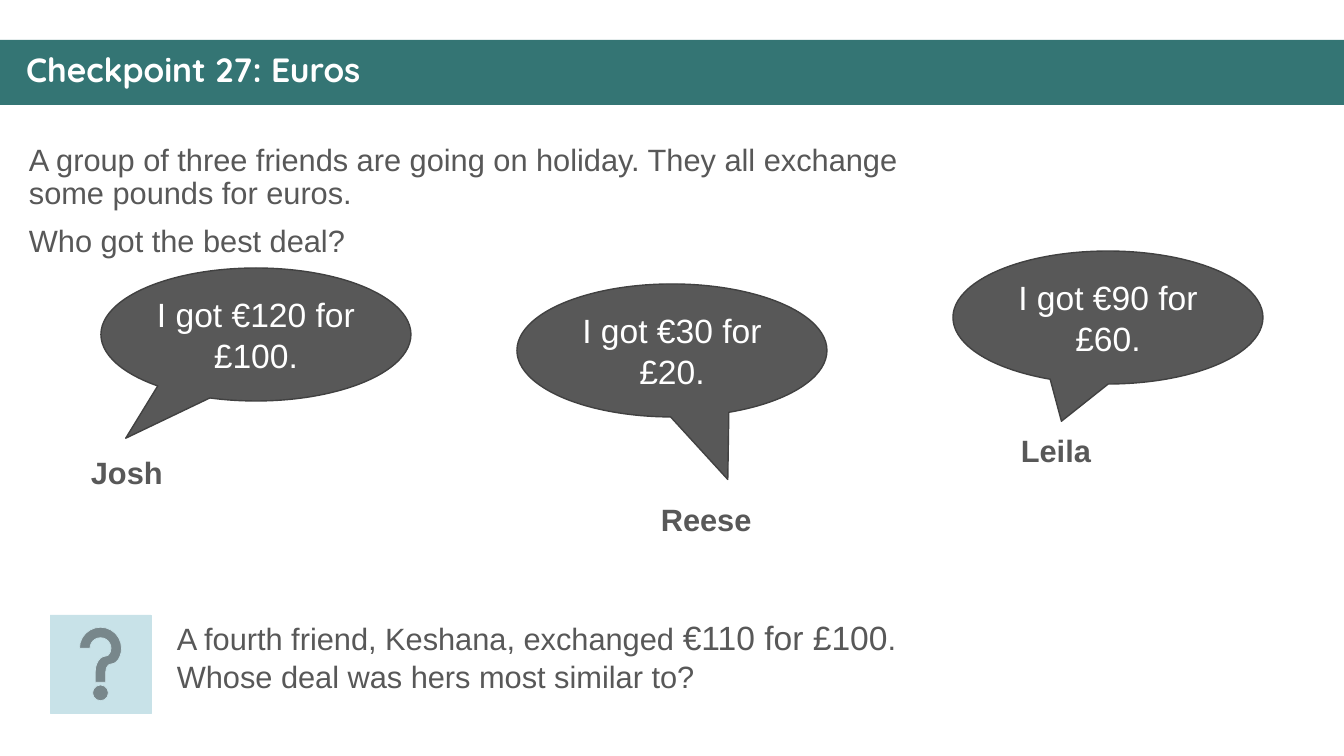
import pptx
import pptx.dml.color
import pptx.enum.shapes
import pptx.enum.text
import pptx.util

RGBColor = pptx.dml.color.RGBColor
Pt = pptx.util.Pt
Shapes = pptx.enum.shapes.MSO_SHAPE
Align = pptx.enum.text.PP_ALIGN
Anchor = pptx.enum.text.MSO_ANCHOR
AutoSize = pptx.enum.text.MSO_AUTO_SIZE

EMU_PER_PX = 914400 / 100.8
TEAL = RGBColor(0x34, 0x75, 0x74)
PALE_BLUE = RGBColor(0xC8, 0xE2, 0xE8)
GREY = RGBColor(0x58, 0x58, 0x58)
DARK_GREY = RGBColor(0x41, 0x41, 0x41)
WHITE = RGBColor(0xFF, 0xFF, 0xFF)

BUBBLE_WIDTH, BUBBLE_HEIGHT = 310, 133
# speech, bubble left and top, pointer adjustments, name, name box
FRIENDS = [
    ("I got €120 for £100.", (101, 268), (-0.42, 0.78), "Josh", (81, 449, 93, 47)),
    ("I got €30 for £20.", (517, 284), (0.18, 0.97), "Reese", (651, 496, 112, 47)),
    ("I got €90 for £60.", (953, 251), (-0.15, 0.78), "Leila", (1011, 427, 92, 47)),
]


def px(*lengths):
    return [round(length * EMU_PER_PX) for length in lengths]


def style(paragraph, size, color=GREY, bold=False, font="Arial"):
    paragraph.font.name = font
    paragraph.font.size = Pt(size)
    paragraph.font.bold = bold
    paragraph.font.color.rgb = color


def add_filled_shape(slide, preset, box, fill, line=None, line_width=1):
    shape = slide.shapes.add_shape(preset, *px(*box))
    shape.shadow.inherit = False
    shape.fill.solid()
    shape.fill.fore_color.rgb = fill
    if line is None:
        shape.line.fill.background()
    else:
        shape.line.color.rgb = line
        shape.line.width = Pt(line_width)
    return shape


def add_text(slide, box, paragraphs, size=22, bold=False, wrap=True):
    frame = slide.shapes.add_textbox(*px(*box)).text_frame
    frame.word_wrap = wrap
    for index, text in enumerate(paragraphs):
        paragraph = frame.paragraphs[0] if index == 0 else frame.add_paragraph()
        paragraph.text = text
        style(paragraph, size, bold=bold)
    return frame


def add_title_band(slide, text):
    band = add_filled_shape(slide, Shapes.RECTANGLE, (0, 40, 1344, 65), TEAL)
    title = slide.shapes.title
    # The band goes behind the title.
    title._element.addprevious(band._element)
    title.left, title.top, title.width, title.height = px(16, 48, 1314, 47)
    frame = title.text_frame
    frame.text = text
    frame.auto_size = AutoSize.NONE
    frame.vertical_anchor = Anchor.TOP
    heading = frame.paragraphs[0]
    heading.alignment = Align.LEFT
    heading.line_spacing = 0.9
    style(heading, 24, WHITE, bold=True, font="Quicksand")


def add_bubble(slide, speech, corner, pointer):
    box = (*corner, BUBBLE_WIDTH, BUBBLE_HEIGHT)
    bubble = add_filled_shape(slide, Shapes.OVAL_CALLOUT, box, GREY, DARK_GREY)
    for index, value in enumerate(pointer):
        bubble.adjustments[index] = value
    frame = bubble.text_frame
    frame.text = speech
    frame.word_wrap = True
    frame.vertical_anchor = Anchor.MIDDLE
    frame.paragraphs[0].alignment = Align.CENTER
    style(frame.paragraphs[0], 24, WHITE)


def add_further_question(slide):
    add_filled_shape(slide, Shapes.ACTION_BUTTON_HELP, (50, 615, 101, 98),
                     PALE_BLUE, PALE_BLUE, 0.5)
    frame = add_text(slide, (167, 612, 786, 89), [""])
    question = frame.paragraphs[0]
    for text, size in [("A fourth friend, Keshana, exchanged ", 22),
                       ("€110 for £100", 24),
                       (". Whose deal was hers most similar to?", 22)]:
        run = question.add_run()
        run.text = text
        run.font.size = Pt(size)


def main():
    presentation = pptx.Presentation()
    presentation.slide_width, presentation.slide_height = px(1344, 756)
    slide = presentation.slides.add_slide(presentation.slide_layouts[5])

    add_title_band(slide, "Checkpoint 27: Euros")
    intro = add_text(slide, (19, 140, 899, 105), [
        "A group of three friends are going on holiday. "
        "They all exchange some pounds for euros.",
        "Who got the best deal?",
    ])
    for paragraph in intro.paragraphs:
        paragraph.line_spacing = 0.9
        paragraph.space_before = Pt(10)

    for speech, corner, pointer, name, name_box in FRIENDS:
        add_bubble(slide, speech, corner, pointer)
        add_text(slide, name_box, [name], bold=True, wrap=False)
    add_further_question(slide)

    presentation.save("out.pptx")


if __name__ == "__main__":
    main()
